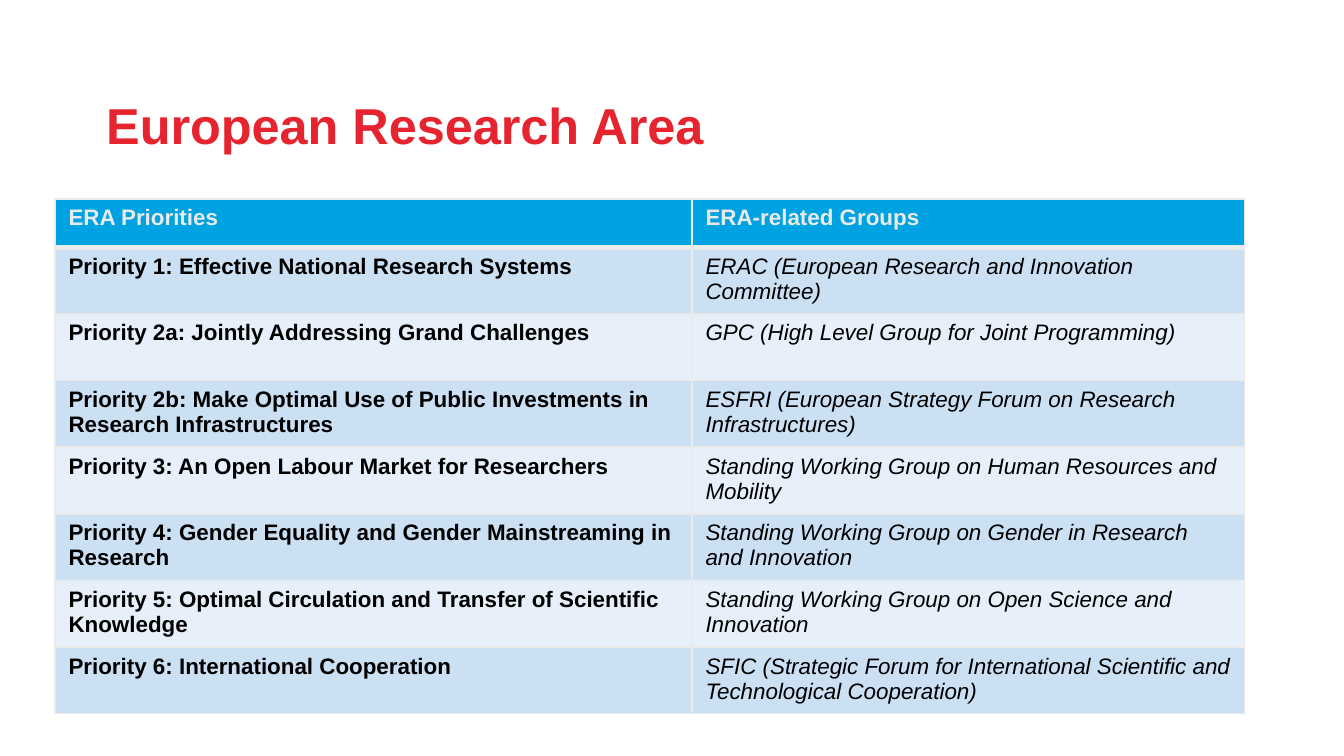
from pptx import Presentation, util as u
from pptx.dml.color import RGBColor
from pptx.enum import text as t
from lxml import etree
from pptx.oxml import ns

ROWS = [
    ("ERA Priorities", "ERA-related Groups"),
    ("Priority 1: Effective National Research Systems",
     "ERAC (European Research and Innovation Committee)"),
    ("Priority 2a: Jointly Addressing Grand Challenges",
     "GPC (High Level Group for Joint Programming)"),
    ("Priority 2b: Make Optimal Use of Public Investments in Research Infrastructures",
     "ESFRI (European Strategy Forum on Research Infrastructures)"),
    ("Priority 3: An Open Labour Market for Researchers",
     "Standing Working Group on Human Resources and Mobility"),
    ("Priority 4: Gender Equality and Gender Mainstreaming in Research",
     "Standing Working Group on Gender in Research and Innovation"),
    ("Priority 5: Optimal Circulation and Transfer of Scientific Knowledge",
     "Standing Working Group on Open Science and Innovation"),
    ("Priority 6: International Cooperation",
     "SFIC (Strategic Forum for International Scientific and Technological Cooperation)"),
]
COLS = [4.74, 4.11]
HIGH, HEAD = 3.83, 0.36
STEP = (HIGH - HEAD) / (len(ROWS) - 1)
RULE = "EAEAEA"


def style(font, color, **form):
    font.color.rgb = RGBColor.from_string(color)
    for key, val in {"name": "Arial", "bold": True, **form}.items():
        setattr(font, key, val)


def edge(cell, side, width):
    line = etree.SubElement(cell._tc.get_or_add_tcPr(), ns.qn("a:ln" + side),
                            w=str(u.Pt(width)))
    fill = etree.SubElement(line, ns.qn("a:solidFill"))
    etree.SubElement(fill, ns.qn("a:srgbClr"), val=RULE)


# Slide, 16:9
deck = Presentation()
deck.slide_width, deck.slide_height = u.Inches(10), u.Inches(10 * 9 / 16)
slide = deck.slides.add_slide(deck.slide_layouts[5])

# Title
title = slide.shapes.title
place = {"left": 0.79, "top": 0.75, "width": 7.79, "height": 0.5}
for key, val in place.items():
    setattr(title, key, u.Inches(val))
frame = title.text_frame
form = {"text": "European Research Area", "word_wrap": True,
        "auto_size": t.MSO_AUTO_SIZE.NONE,
        "vertical_anchor": t.MSO_ANCHOR.TOP,
        "margin_left": 0, "margin_right": 0, "margin_top": 0, "margin_bottom": 0}
for key, val in form.items():
    setattr(frame, key, val)
para = frame.paragraphs[0]
para.alignment, para.line_spacing = t.PP_ALIGN.LEFT, 0.9
style(para.runs[0].font, "E6242F", size=u.Pt(27))

# Table grid
grid = slide.shapes.add_table(len(ROWS), len(COLS), u.Inches(0.41), u.Inches(1.48),
                              u.Inches(sum(COLS)), u.Inches(HIGH)).table
for col, wide in zip(grid.columns, COLS):
    col.width = u.Inches(wide)
for r, row in enumerate(grid.rows):
    row.height = u.Inches(STEP if r else HEAD)

# Table cells: header row, then two alternating bands
for r, words in enumerate(ROWS):
    back = ("CCE0F4" if r % 2 else "E7F0FA") if r else "00A3E2"
    for c, word in enumerate(words):
        cell = grid.cell(r, c)
        cell.text = word
        group = r > 0 and c == 1
        style(cell.text_frame.paragraphs[0].runs[0].font, "000000" if r else RULE,
              size=u.Pt(12), bold=not group, italic=group)
        for side in "LRTB":
            thick = (r, side) in ((0, "B"), (1, "T"))
            edge(cell, side, 3 if thick else 1)
        cell.fill.solid()
        cell.fill.fore_color.rgb = RGBColor.from_string(back)

deck.save("out.pptx")
